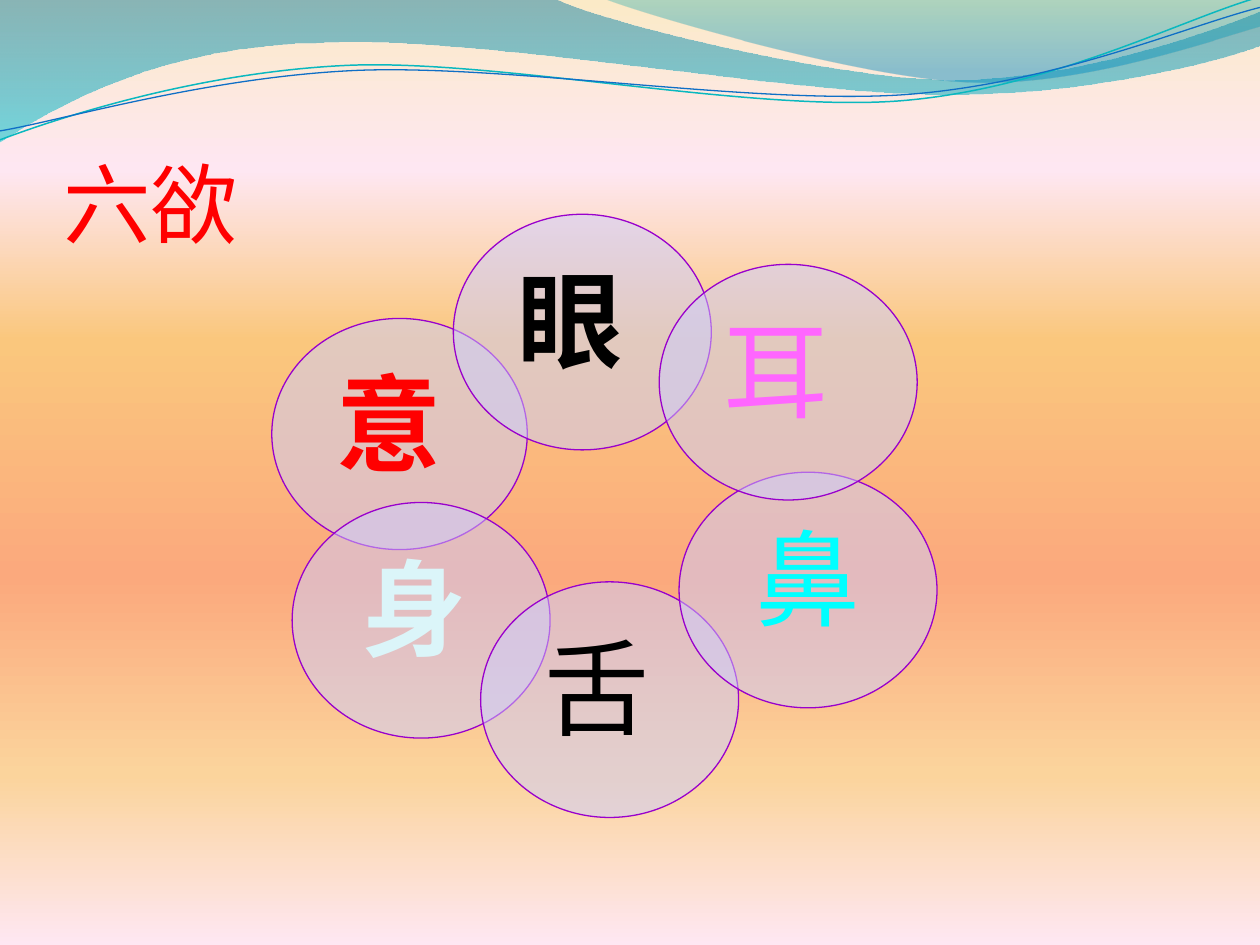
import math

import pptx
import pptx.dml.color
import pptx.enum.lang
import pptx.enum.shapes
import pptx.enum.text
import pptx.oxml.ns
import pptx.util
from lxml import etree

Cm = pptx.util.Cm
Pt = pptx.util.Pt
RGBColor = pptx.dml.color.RGBColor
qn = pptx.oxml.ns.qn
ALIGN = pptx.enum.text.PP_ALIGN
ANCHOR = pptx.enum.text.MSO_ANCHOR
OVAL = pptx.enum.shapes.MSO_SHAPE.OVAL
CHINESE = pptx.enum.lang.MSO_LANGUAGE_ID.SIMPLIFIED_CHINESE

CREAM = RGBColor(0xFB, 0xEA, 0xC7)
BLUSH = RGBColor(0xFE, 0xE7, 0xF2)
AMBER = RGBColor(0xFA, 0xC7, 0x7D)
CORAL = RGBColor(0xFB, 0xA9, 0x7D)
SAND = RGBColor(0xFB, 0xD4, 0x9C)
DEEP_BLUE = RGBColor(0x00, 0x74, 0xA1)
TURQUOISE = RGBColor(0x00, 0xC6, 0xCF)
TEAL = RGBColor(0x00, 0xA1, 0xA9)
SEA_BLUE = RGBColor(0x00, 0x8B, 0xBF)
LINE_TEAL = RGBColor(0x0A, 0xB8, 0xBF)
LINE_BLUE = RGBColor(0x0F, 0x6F, 0xC6)
LAVENDER = RGBColor(0xCC, 0xCC, 0xFF)
PURPLE = RGBColor(0x99, 0x00, 0xCC)
RED = RGBColor(0xFF, 0x00, 0x00)
BLACK = RGBColor(0x00, 0x00, 0x00)
ICE = RGBColor(0xDB, 0xF5, 0xF9)
CYAN = RGBColor(0x00, 0xFF, 0xFF)
PINK = RGBColor(0xFF, 0x66, 0xFF)

# Wave outlines in cm: a start, then one point for a line or three for a Bézier curve.
LEFT_WAVE = [
    [(0, -0.03)], [(11.18, -0.03)],
    [(12.09, 0.43), (16.87, 1.6), (19.25, 1.6)],
    [(21.67, 1.6), (24.33, 0.66), (25.4, 0.23)], [(25.42, 0.91)],
    [(24.97, 1.12), (22.1, 1.93), (18.95, 1.9)],
    [(15.8, 1.9), (9.7, 0.71), (6.53, 0.86)],
    [(3.28, 0.89), (1.17, 2.11), (-0.03, 2.87)],
]
RIGHT_WAVE = [
    [(12.17, -0.03)],
    [(12.93, 0.28), (17.32, 1.57), (19.53, 1.65)],
    [(21.74, 1.75), (24.41, 0.81), (25.4, 0.53)], [(25.4, 0)],
]
TEAL_LINE = [
    [(0, 2.82)],
    [(1.22, 2.36), (4.01, 1.45), (7.04, 1.32)],
    [(10.03, 1.19), (15.06, 2.26), (18.11, 2.03)],
    [(21.16, 1.8), (23.83, 0.38), (25.35, -0.05)],
]
BLUE_LINE = [
    [(0, 2.64)],
    [(1.19, 2.44), (4.17, 1.55), (7.19, 1.42)],
    [(10.24, 1.3), (15.16, 2.11), (18.21, 1.91)],
    [(21.23, 1.7), (23.9, 0.53), (25.4, 0.15)],
]
LINE_TILT = -2.7

# Character, offset in the ring, colour, bold, shift of the text to the left (cm).
SENSES = [
    ("眼", 3.66, 0, BLACK, True, 0.25),
    ("身", 0.41, 5.81, ICE, True, 0.14),
    ("舌", 4.21, 7.41, BLACK, False, 0.25),
    ("鼻", 8.21, 5.2, CYAN, False, 0),
    ("耳", 7.81, 1.01, PINK, False, 0.25),
]


def set_alpha(color_element, percent):
    etree.SubElement(color_element, qn("a:alpha")).set("val", str(percent * 1000))


def fill_gradient(fill, owner, stops):
    """Fill from top to bottom with (position, colour, opacity) stops in percent."""
    fill.gradient()
    fill.gradient_angle = 270
    stop_list = next(owner.iter(qn("a:gsLst")))
    for stop in list(stop_list):
        stop_list.remove(stop)
    for position, color, opacity in stops:
        stop = etree.SubElement(stop_list, qn("a:gs"), pos=str(position * 1000))
        color_element = etree.SubElement(stop, qn("a:srgbClr"), val=str(color))
        if opacity < 100:
            set_alpha(color_element, opacity)


def turn(point, center, degrees):
    angle = math.radians(degrees)
    x, y = point[0] - center[0], point[1] - center[1]
    return (center[0] + x * math.cos(angle) - y * math.sin(angle),
            center[1] + x * math.sin(angle) + y * math.cos(angle))


def bend(wave, outline):
    """Join the three straight steps of each curved segment into one Bézier curve."""
    steps = list(wave.element.iter(qn("a:lnTo")))
    for segment in outline[1:]:
        group, steps = steps[:len(segment)], steps[len(segment):]
        if len(segment) == 3:
            curve = etree.Element(qn("a:cubicBezTo"))
            group[0].addprevious(curve)
            for step in group:
                curve.append(step[0])
                step.getparent().remove(step)


def draw_outline(slide, outline, left, top, close, tilt=0, center=(0, 0)):
    points = [turn(point, center, -tilt) for segment in outline for point in segment]
    units = [(round(x * 100), round(y * 100)) for x, y in points]
    builder = slide.shapes.build_freeform(*units[0], scale=Cm(0.01))
    builder.add_line_segments(units[1:], close=close)
    wave = builder.convert_to_shape(Cm(left), Cm(top))
    bend(wave, outline)
    wave.rotation = tilt
    wave.shadow.inherit = False
    return wave


def add_waves(slide, left, top):
    for outline, stops in (
        (LEFT_WAVE, [(0, DEEP_BLUE, 45), (100, TURQUOISE, 55)]),
        (RIGHT_WAVE, [(0, TEAL, 30), (80, SEA_BLUE, 45)]),
    ):
        band = draw_outline(slide, outline, left, top, close=True)
        fill_gradient(band.fill, band.element, stops)
        band.line.fill.background()
    for outline, center, color, width in (
        (TEAL_LINE, (12.67, 1.46), LINE_TEAL, 0.85),
        (BLUE_LINE, (12.69, 1.5), LINE_BLUE, 0.75),
    ):
        strand = draw_outline(slide, outline, left, top, False, LINE_TILT, center)
        strand.fill.background()
        strand.line.color.rgb = color
        strand.line.width = Pt(width)


def write_text(shape, text, *, size, color, font, bold=False, align=ALIGN.CENTER,
               anchor=ANCHOR.TOP, insets=(0.25, 0.13, 0.25, 0.13)):
    frame = shape.text_frame
    frame.word_wrap = True
    frame.auto_size = pptx.enum.text.MSO_AUTO_SIZE.NONE
    frame.vertical_anchor = anchor
    (frame.margin_left, frame.margin_top,
     frame.margin_right, frame.margin_bottom) = map(Cm, insets)
    paragraph = frame.paragraphs[0]
    paragraph.alignment = align
    paragraph.space_before = Pt(0)
    run = paragraph.add_run()
    run.text = text
    run.font.size = Pt(size)
    run.font.bold = bold
    run.font.name = font
    run.font.color.rgb = color
    run.font.language_id = CHINESE
    return paragraph


def place(shape, left, top, width, height):
    shape.left, shape.top, shape.width, shape.height = map(Cm, (left, top, width, height))


def add_title(slide, left, top, width, height):
    title = slide.shapes.title
    slide.shapes.element.append(title.element)  # in front of the waves
    place(title, left, top, width, height)
    write_text(title, "六欲", size=50, color=RED, font="Calibri", align=ALIGN.LEFT,
               anchor=ANCHOR.BOTTOM, insets=(0, 0.13, 0, 0))


def style_circle(circle):
    circle.fill.solid()
    circle.fill.fore_color.rgb = LAVENDER
    set_alpha(circle.element.spPr.find(qn("a:solidFill"))[0], 50)
    circle.line.color.rgb = PURPLE
    circle.line.width = Pt(0.75)


def add_mind_circle(slide, left, top):
    """Turn the body placeholder into the circle for the mind."""
    mind = slide.placeholders[1]
    slide.shapes.element.append(mind.element)
    place(mind, left, top, 5.15, 4.66)
    geometry = etree.Element(qn("a:prstGeom"), prst="ellipse")
    etree.SubElement(geometry, qn("a:avLst"))
    mind.element.spPr.find(qn("a:xfrm")).addnext(geometry)
    style_circle(mind)
    paragraph = write_text(mind, "意", size=60, color=RED, font="TeX Gyre Pagella",
                           bold=True, insets=(0.25, 0.13, 0.67, 0.13))
    properties = paragraph._p.get_or_add_pPr()
    properties.set("marL", "0")
    properties.set("indent", "0")
    etree.SubElement(properties, qn("a:buNone"))


def add_sense_ring(slide, left, top):
    add_mind_circle(slide, left, top + 2.1)
    for sense, x, y, color, bold, shift in SENSES:
        circle = slide.shapes.add_shape(OVAL, Cm(left + x), Cm(top + y), Cm(5.2), Cm(4.75))
        circle.shadow.inherit = False
        style_circle(circle)
        write_text(circle, sense, size=60, color=color, font="Arial", bold=bold,
                   insets=(0.25, 0.13, 0.25 + 2 * shift, 0.13))


def main():
    deck = pptx.Presentation()
    deck.slide_width, deck.slide_height = Cm(25.4), Cm(19.05)
    slide = deck.slides.add_slide(deck.slide_layouts[1])
    fill_gradient(slide.background.fill, slide.element, [
        (0, CREAM, 100), (18, BLUSH, 100), (36, AMBER, 100),
        (61, CORAL, 100), (82, SAND, 100), (100, BLUSH, 100)])
    add_waves(slide, 0, 0)
    add_title(slide, 1.27, 1.96, 22.86, 3.18)
    add_sense_ring(slide, 5.48, 4.32)
    deck.save("out.pptx")


if __name__ == "__main__":
    main()
